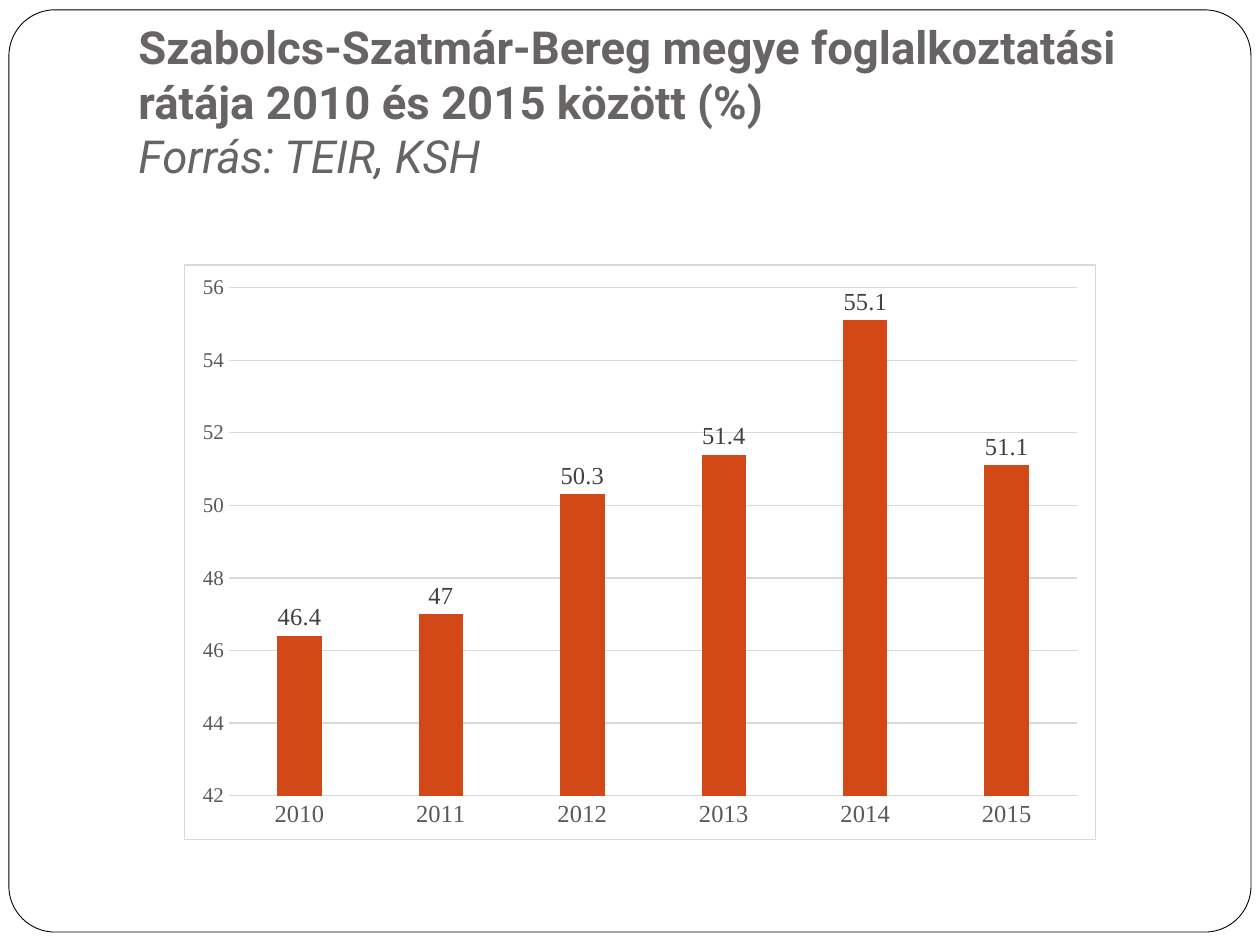
"""Build the employment rate slide with its column chart."""
from lxml.etree import fromstring
from pptx import Presentation
from pptx.chart.data import CategoryChartData as Data
from pptx.dml.color import RGBColor as Rgb
from pptx.enum.chart import XL_CHART_TYPE as Kind, XL_LABEL_POSITION as Spot, XL_TICK_MARK as Tick
from pptx.enum.shapes import MSO_SHAPE as Form
from pptx.enum.text import MSO_ANCHOR as Anchor
from pptx.util import Cm, Pt


def paint(part, tint):
    part.solid()
    part.fore_color.rgb = Rgb.from_string(tint)


def style(font, tint, **form):
    for key, val in form.items():
        setattr(font, key, val)
    paint(font.fill, tint)


deck = Presentation()
deck.slide_width, deck.slide_height = Cm(25.4), Cm(19.05)
slide = deck.slides.add_slide(deck.slide_layouts[6])

frame = slide.shapes.add_shape(Form.ROUNDED_RECTANGLE, Cm(0.18), Cm(0.2), Cm(25.04), Cm(18.59))
frame.adjustments[0] = 0.05
frame.shadow.inherit = False
paint(frame.fill, "FFFFFF")
paint(frame.line.fill, "000000")
frame.line.width = Pt(0.5)

title = slide.shapes.add_textbox(Cm(2.54), Cm(0.76), Cm(21.59), Cm(3.18)).text_frame
layout = {
    "word_wrap": True,
    "vertical_anchor": Anchor.BOTTOM,
    "margin_left": Cm(0.25),
    "margin_right": Cm(0.25),
    "margin_top": Cm(0.13),
    "margin_bottom": Cm(0.25),
}
for key, val in layout.items():
    setattr(title, key, val)
para = title.paragraphs[0]
head = para.add_run()
head.text = "Szabolcs-Szatmár-Bereg megye foglalkoztatási rátája 2010 és 2015 között (%)"
para.add_line_break()
source = para.add_run()
source.text = "Forrás: TEIR, KSH"
style(head.font, "696464", name="Roboto", size=Pt(26), bold=True)
style(source.font, "696464", name="Roboto", size=Pt(26), italic=True)

data = Data(number_format="General")
data.categories = ["2010", "2011", "2012", "2013", "2014", "2015"]
data.add_series("Series 1", [46.4, 47, 50.3, 51.4, 55.1, 51.1])
chart = slide.shapes.add_chart(
    Kind.COLUMN_CLUSTERED, Cm(3.71), Cm(5.33), Cm(18.39), Cm(11.61), data
).chart
chart.has_legend = chart.has_title = False
serif = "Times New Roman"
style(chart.font, "000000", name=serif, size=Pt(10))
border = fromstring(
    '<c:spPr xmlns:c="http://schemas.openxmlformats.org/drawingml/2006/chart"'
    ' xmlns:a="http://schemas.openxmlformats.org/drawingml/2006/main">'
    '<a:solidFill><a:srgbClr val="FFFFFF"/></a:solidFill>'
    '<a:ln w="9525"><a:solidFill><a:srgbClr val="D9D9D9"/></a:solidFill></a:ln></c:spPr>'
)
chart.element.chart.addnext(border)

years, rates = chart.category_axis, chart.value_axis
for axis, size in ((years, 14), (rates, 12)):
    axis.major_tick_mark = axis.minor_tick_mark = Tick.NONE
    style(axis.tick_labels.font, "595959", name=serif, size=Pt(size))
scale = {"minimum_scale": 42, "maximum_scale": 56, "major_unit": 2}
for key, val in scale.items():
    setattr(rates, key, val)
rates.format.line.fill.background()
for line in (years.format.line, rates.major_gridlines.format.line):
    paint(line.fill, "D9D9D9")
    line.width = Pt(0.75)

plot = chart.plots[0]
plot.gap_width, plot.overlap, plot.vary_by_categories = 219, -27, False
paint(plot.series[0].format.fill, "D34817")
labels = plot.series[0].data_labels
labels.show_value = True
labels.position = Spot.OUTSIDE_END
style(labels.font, "404040", name=serif, size=Pt(14))

deck.save("out.pptx")
